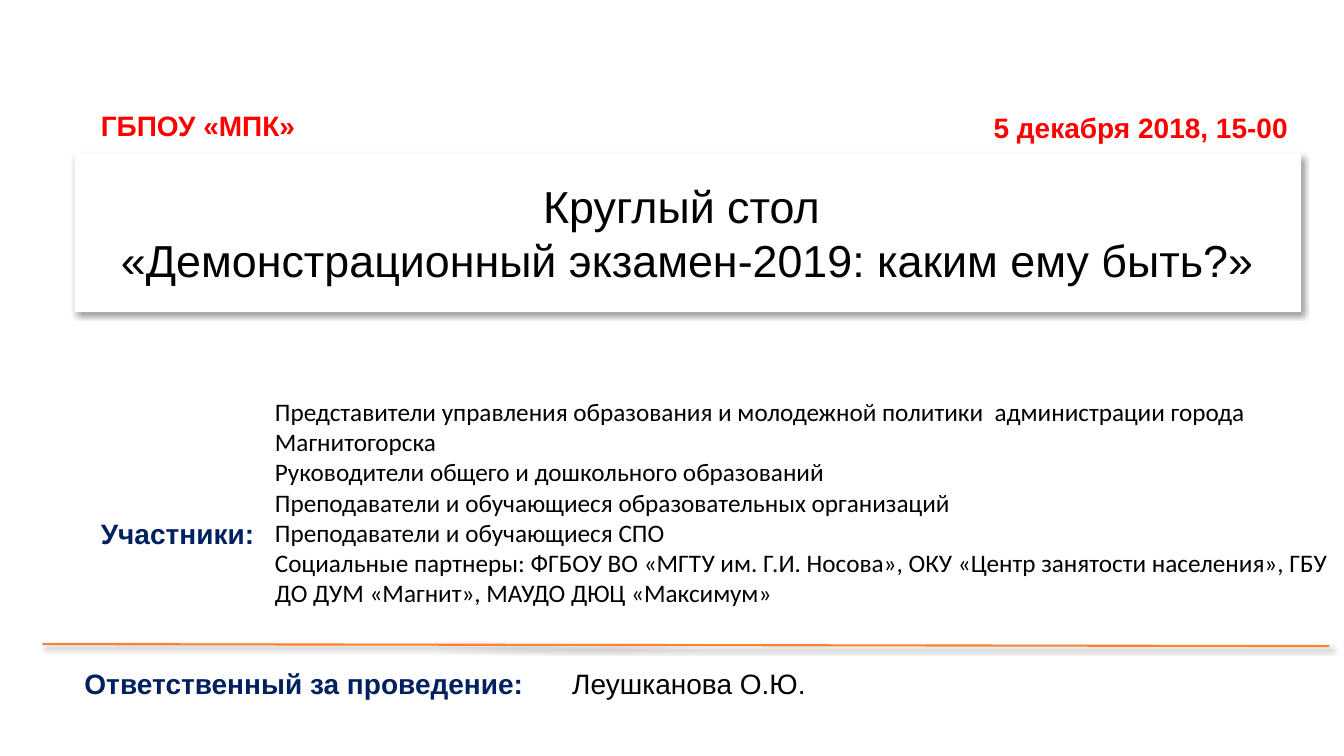
from dataclasses import dataclass

from lxml import etree
from pptx import Presentation
from pptx.dml.color import RGBColor
from pptx.enum.shapes import MSO_CONNECTOR, MSO_SHAPE
from pptx.enum.text import MSO_ANCHOR, MSO_AUTO_SIZE, PP_ALIGN
from pptx.oxml import parse_xml
from pptx.oxml.ns import nsdecls
from pptx.util import Cm, Pt

RECTANGLE = MSO_SHAPE.RECTANGLE
STRAIGHT = MSO_CONNECTOR.STRAIGHT
MIDDLE = MSO_ANCHOR.MIDDLE
FIT_SHAPE = MSO_AUTO_SIZE.SHAPE_TO_FIT_TEXT
CENTER = PP_ALIGN.CENTER

WHITE = RGBColor(0xFF, 0xFF, 0xFF)
BLACK = RGBColor(0x00, 0x00, 0x00)
RED = RGBColor(0xFF, 0x00, 0x00)
NAVY = RGBColor(0x00, 0x20, 0x60)
ORANGE = RGBColor(0xFD, 0x82, 0x31)

TITLE = "Круглый стол \v«Демонстрационный экзамен-2019: каким ему быть?»"
PARTICIPANTS = (
    "Представители управления образования и молодежной политики  "
    "администрации города Магнитогорска",
    "Руководители общего и дошкольного образований",
    "Преподаватели и обучающиеся образовательных организаций",
    "Преподаватели и обучающиеся СПО",
    "Социальные партнеры: ФГБОУ ВО «МГТУ им. Г.И. Носова», ОКУ «Центр занятости "
    "населения», ГБУ ДО ДУМ «Магнит», МАУДО ДЮЦ «Максимум»",
)


@dataclass(frozen=True)
class TextBox:
    lines: tuple[str, ...]
    left: float
    top: float
    width: float
    height: float = 1.12
    color: RGBColor = BLACK
    bold: bool = False
    wrap: bool = False
    font: str = "Arial"
    size: int = 20


TEXT_BOXES = (
    TextBox(("5 декабря 2018, 15-00",), 24.79, 2.67, 7.98, color=RED, bold=True),
    TextBox(PARTICIPANTS, 6.68, 9.86, 27.18, 5.74, wrap=True, font="Calibri", size=18),
    TextBox(("Участники:",), 2.29, 12.88, 4.42, color=NAVY, bold=True),
    TextBox(("Ответственный за проведение:",), 1.88, 16.66, 11.66, color=NAVY, bold=True),
    TextBox(("Леушканова О.Ю.",), 14.17, 16.66, 16.94, wrap=True),
    TextBox(("ГБПОУ «МПК»",), 2.29, 2.62, 5.46, color=RED, bold=True),
)


def format_run(r, font: str, size: int, color: RGBColor, bold: bool = False) -> None:
    r.font.name = font
    r.font.size = Pt(size)
    r.font.color.rgb = color
    r.font.bold = bold


def add_shadow(properties: etree.ElementBase) -> None:
    """Append a soft shadow to shape properties whose line is already set."""
    properties.append(parse_xml(
        f'<a:effectLst {nsdecls("a")}>'
        f'<a:outerShdw blurRad="{Pt(4)}" dist="{Pt(3)}" dir="2700000" '
        'algn="tl" rotWithShape="0">'
        '<a:srgbClr val="000000"><a:alpha val="40000"/></a:srgbClr>'
        '</a:outerShdw></a:effectLst>'
    ))


def add_title(s) -> None:
    sp = s.shapes.add_shape(RECTANGLE, Cm(1.88), Cm(3.86), Cm(30.91), Cm(4.01))
    sp.fill.solid()
    sp.fill.fore_color.rgb = WHITE
    sp.line.fill.background()
    add_shadow(sp.element.spPr)
    tf = sp.text_frame
    tf.word_wrap = True
    tf.vertical_anchor = MIDDLE
    tf.text = TITLE
    p = tf.paragraphs[0]
    p.alignment = CENTER
    for r in p.runs:
        format_run(r, "Arial", 32, BLACK)


def add_divider(s) -> None:
    line = s.shapes.add_connector(STRAIGHT, Cm(1.07), Cm(16.23), Cm(33.5), Cm(16.28))
    line.line.color.rgb = ORANGE
    line.line.width = Pt(1.5)
    add_shadow(line.element.spPr)


def add_text(s, box: TextBox) -> None:
    sp = s.shapes.add_textbox(Cm(box.left), Cm(box.top), Cm(box.width), Cm(box.height))
    tf = sp.text_frame
    tf.word_wrap = box.wrap
    tf.auto_size = FIT_SHAPE
    tf.text = "\n".join(box.lines)
    for p in tf.paragraphs:
        for r in p.runs:
            format_run(r, box.font, box.size, box.color, box.bold)


def main() -> None:
    prs = Presentation()
    prs.slide_width, prs.slide_height = Cm(33.87), Cm(19.05)
    s = prs.slides.add_slide(prs.slide_layouts[6])
    add_title(s)
    add_divider(s)
    for box in TEXT_BOXES:
        add_text(s, box)
    prs.save("out.pptx")


if __name__ == "__main__":
    main()
